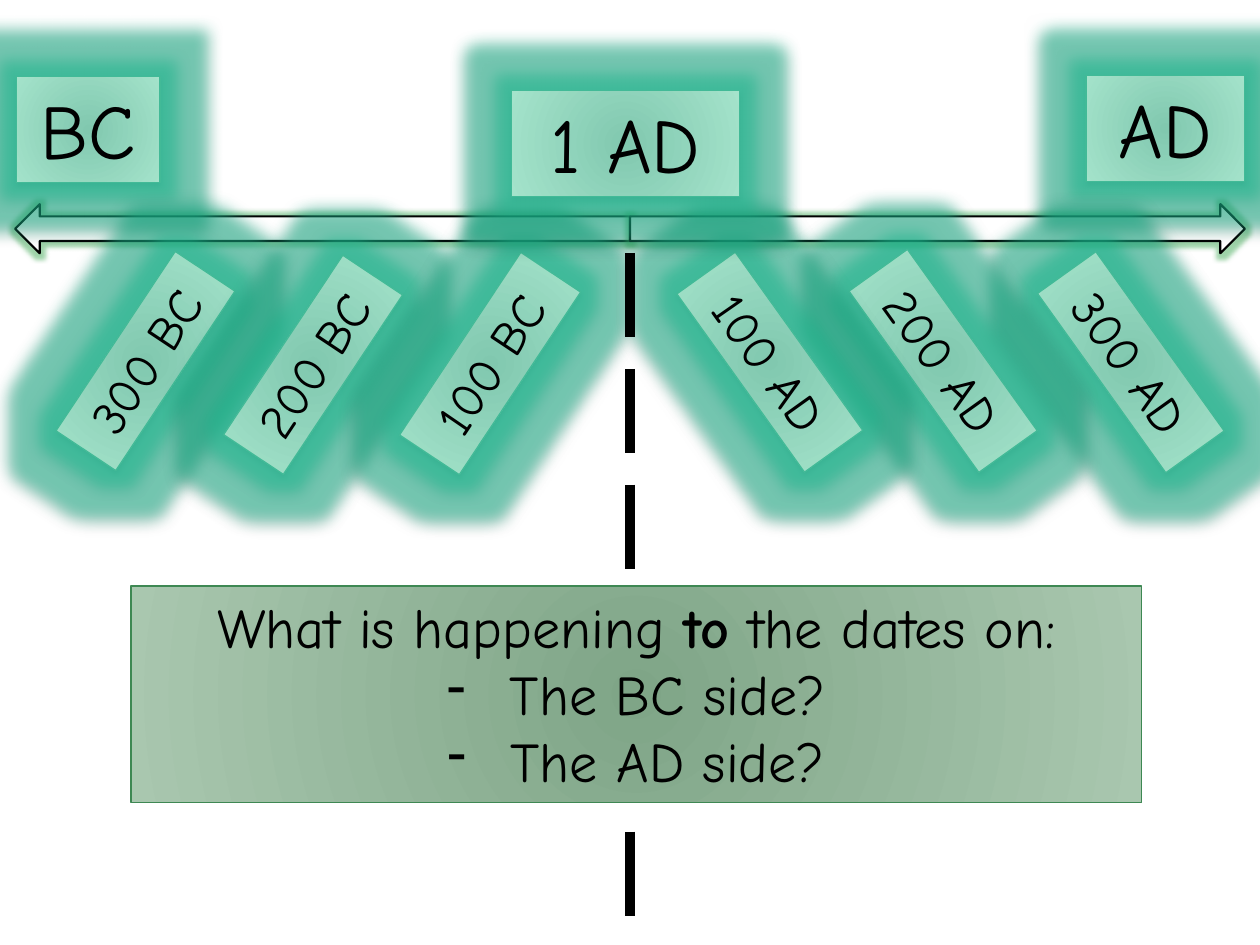
from dataclasses import dataclass

from lxml import etree
from pptx import Presentation
from pptx.dml.color import RGBColor
from pptx.enum.dml import MSO_LINE
from pptx.enum.shapes import MSO_CONNECTOR, MSO_SHAPE
from pptx.enum.text import MSO_ANCHOR, MSO_AUTO_SIZE, PP_ALIGN
from pptx.oxml import parse_xml
from pptx.oxml.ns import nsdecls, qn
from pptx.util import Inches, Pt


@dataclass(frozen=True)
class Theme:
    font: str = "Comic Neue"
    heading_size: int = 44
    question_size: int = 32
    date_size: int = 28
    black: str = "000000"
    white: str = "FFFFFF"
    label_fill: tuple = ("81C8AF", "A4E3CB")
    label_line: str = "42BA97"
    label_glow: str = "1ABD92"
    question_fill: tuple = ("7FA587", "A9C7AF")
    question_line: str = "3E8853"
    arrow_glow: str = "3EA853"


THEME = Theme()


def rgb(color):
    return RGBColor.from_string(color)


def add_effects(shape, glow, radius, shadow=False):
    """Give the shape a half-transparent glow and, if asked, a soft shadow below."""
    shadow_xml = (
        f'<a:outerShdw blurRad="{Pt(3.1)}" dist="{Pt(1.6)}" dir="5400000" rotWithShape="0">'
        f'<a:srgbClr val="{THEME.black}"><a:alpha val="38000"/></a:srgbClr></a:outerShdw>'
    )
    shape.shadow.inherit = False
    properties = shape.element.spPr
    effects = parse_xml(
        f'<a:effectLst {nsdecls("a")}><a:glow rad="{Pt(radius)}"><a:srgbClr val="{glow}">'
        f'<a:alpha val="50000"/></a:srgbClr></a:glow>{shadow_xml if shadow else ""}</a:effectLst>'
    )
    properties.replace(properties.find(qn("a:effectLst")), effects)


def fill_radial(shape, colors):
    """Blend from the first colour at the centre to the second at the edge."""
    shape.fill.gradient()
    for stop, color, position in zip(shape.fill.gradient_stops, colors, (0, 1)):
        stop.color.rgb = rgb(color)
        stop.position = position
    gradient = shape.element.spPr.find(qn("a:gradFill"))
    circle = parse_xml(
        f'<a:path {nsdecls("a")} path="circle">'
        '<a:fillToRect l="100000" t="100000" r="100000" b="100000"/></a:path>'
    )
    gradient.replace(gradient.find(qn("a:lin")), circle)


def add_panel(slide, box, colors, line):
    shape = slide.shapes.add_shape(MSO_SHAPE.RECTANGLE, *map(Inches, box))
    shape.shadow.inherit = False
    fill_radial(shape, colors)
    shape.line.color.rgb = rgb(line)
    shape.line.width = Pt(0.75)
    frame = shape.text_frame
    frame.word_wrap = True
    frame.auto_size = MSO_AUTO_SIZE.SHAPE_TO_FIT_TEXT
    frame.vertical_anchor = MSO_ANCHOR.TOP
    return shape


def style_paragraph(paragraph, size):
    paragraph.alignment = PP_ALIGN.CENTER
    paragraph.font.name = THEME.font
    paragraph.font.size = Pt(size)
    paragraph.font.color.rgb = rgb(THEME.black)


def add_label(slide, box, text, size, rotation=0):
    label = add_panel(slide, box, THEME.label_fill, THEME.label_line)
    label.rotation = rotation
    add_effects(label, THEME.label_glow, 18, shadow=True)
    paragraph = label.text_frame.paragraphs[0]
    paragraph.text = text
    style_paragraph(paragraph, size)


def add_timeline(slide, box):
    """Draw two arrows that meet in the middle of the box and point outwards."""
    left, top, width, height = box
    half = width / 2
    for start, rotation in ((left, 0), (left + half, 180)):
        arrow = slide.shapes.add_shape(
            MSO_SHAPE.LEFT_ARROW, *map(Inches, (start, top, half, height))
        )
        arrow.rotation = rotation
        arrow.fill.solid()
        arrow.fill.fore_color.rgb = rgb(THEME.white)
        arrow.line.color.rgb = rgb(THEME.black)
        arrow.line.width = Pt(1.25)
        add_effects(arrow, THEME.arrow_glow, 5)


def add_divider(slide, x, top, bottom):
    divider = slide.shapes.add_connector(
        MSO_CONNECTOR.STRAIGHT, *map(Inches, (x, top, x, bottom))
    )
    divider.line.color.rgb = rgb(THEME.black)
    divider.line.width = Pt(6)
    divider.line.dash_style = MSO_LINE.LONG_DASH
    etree.SubElement(divider.element.spPr, qn("a:effectLst"))


def add_question(slide, box):
    panel = add_panel(slide, box, THEME.question_fill, THEME.question_line)
    frame = panel.text_frame
    question = frame.paragraphs[0]
    for text in ("What is happening ", "to", " the dates on:"):
        run = question.add_run()
        run.text = text
        run.font.bold = text == "to"
    style_paragraph(question, THEME.question_size)
    for text in ("The BC side?", "The AD side?"):
        item = frame.add_paragraph()
        item.text = text
        style_paragraph(item, THEME.question_size)
        properties = item._p.get_or_add_pPr()
        properties.set("marL", str(Inches(0.5)))
        properties.set("indent", str(-Inches(0.5)))
        bullet = parse_xml(f'<a:buChar {nsdecls("a")} char="-"/>')
        properties.find(qn("a:defRPr")).addprevious(bullet)


def add_dates(slide):
    bc_angle, ad_angle, height = 303.6, 54.4, 0.57
    dates = (
        ("300 BC", 0.3, 2.58, 1.71, bc_angle),
        ("200 BC", 1.63, 2.61, 1.71, bc_angle),
        ("100 BC", 3.02, 2.6, 1.74, bc_angle),
        ("300 AD", 8.1, 2.59, 1.75, ad_angle),
        ("200 AD", 6.6, 2.58, 1.77, ad_angle),
        ("100 AD", 5.24, 2.59, 1.74, ad_angle),
    )
    for text, left, top, width, angle in dates:
        add_label(slide, (left, top, width, height), text, THEME.date_size, angle)


def main():
    presentation = Presentation()
    presentation.slide_width = Inches(10)
    presentation.slide_height = Inches(7.5)
    slide = presentation.slides.add_slide(presentation.slide_layouts[6])

    add_timeline(slide, (0.12, 1.62, 9.76, 0.39))
    add_label(slide, (0.13, 0.61, 1.14, 0.84), "BC", THEME.heading_size)
    add_label(slide, (8.62, 0.6, 1.26, 0.84), "AD", THEME.heading_size)
    add_dates(slide)
    add_label(slide, (4.06, 0.72, 1.81, 0.84), "1 AD", THEME.heading_size)
    add_divider(slide, 5, 2.01, 7.29)
    add_question(slide, (1.04, 4.65, 8.02, 1.72))

    presentation.save("out.pptx")


if __name__ == "__main__":
    main()
